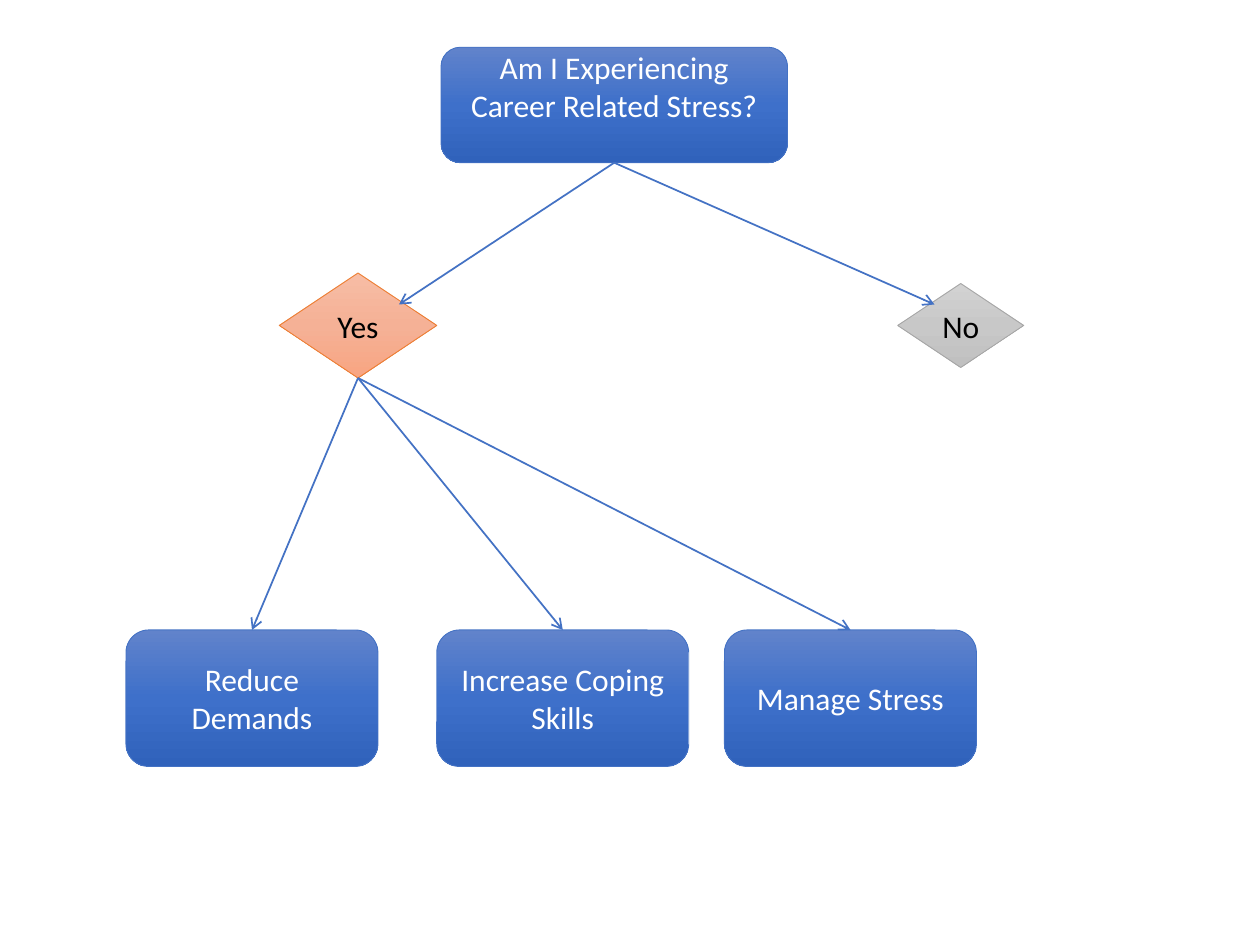
import copy

import pptx
import pptx.dml.color
import pptx.enum.shapes
import pptx.enum.text
import pptx.oxml
import pptx.oxml.ns
import pptx.util

RGBColor = pptx.dml.color.RGBColor
BLUE = RGBColor(0x44, 0x72, 0xC4)
ORANGE = RGBColor(0xED, 0x7D, 0x31)
GRAY = RGBColor(0xA5, 0xA5, 0xA5)
WHITE = RGBColor(0xFF, 0xFF, 0xFF)
BLACK = RGBColor(0, 0, 0)
BLUE_SHADES = [RGBColor(0x61, 0x83, 0xCB), RGBColor(0x3E, 0x70, 0xCA), RGBColor(0x30, 0x62, 0xBB)]
ORANGE_SHADES = [RGBColor(0xF7, 0xBD, 0xA5), RGBColor(0xF5, 0xB1, 0x96), RGBColor(0xF8, 0xA5, 0x82)]
GRAY_SHADES = [RGBColor(0xD2, 0xD2, 0xD2), RGBColor(0xC8, 0xC8, 0xC8), RGBColor(0xC0, 0xC0, 0xC0)]

PROCESS = pptx.enum.shapes.MSO_SHAPE.FLOWCHART_ALTERNATE_PROCESS
DECISION = pptx.enum.shapes.MSO_SHAPE.FLOWCHART_DECISION
TOP, BOTTOM = 0, 2

presentation = pptx.Presentation()
presentation.slide_width = pptx.util.Inches(10)
presentation.slide_height = pptx.util.Inches(7.5)
slide = presentation.slides.add_slide(presentation.slide_layouts[6])

# The grid has 120 columns and 90 rows.
COLUMN = presentation.slide_width / 120
ROW = presentation.slide_height / 90


def add_node(kind, text, left, top, width, height, shades, line_color, text_color):
    """Add a flowchart node placed in grid columns and rows."""
    shape = slide.shapes.add_shape(kind, round(left * COLUMN), round(top * ROW),
                                   round(width * COLUMN), round(height * ROW))
    shape.shadow.inherit = False
    shape.line.color.rgb = line_color
    shape.line.width = pptx.util.Pt(0.5)
    shape.fill.gradient()
    shape.fill.gradient_angle = 270
    stop_list = shape.fill._xPr.find(".//" + pptx.oxml.ns.qn("a:gsLst"))
    stop_list.append(copy.deepcopy(stop_list[-1]))
    for stop, position, shade in zip(shape.fill.gradient_stops, (0, 0.5, 1), shades):
        stop.position = position
        stop.color.rgb = shade
    text_frame = shape.text_frame
    text_frame.text = text
    text_frame.word_wrap = True
    text_frame.vertical_anchor = pptx.enum.text.MSO_ANCHOR.MIDDLE
    paragraph = text_frame.paragraphs[0]
    paragraph.alignment = pptx.enum.text.PP_ALIGN.CENTER
    font = paragraph.runs[0].font
    font.name = "Calibri"
    font.size = pptx.util.Pt(18)
    font.color.rgb = text_color
    return shape


def add_arrow(source, column, row, target=None):
    """Draw an arrow from the bottom of source to a grid point or the top of target."""
    connector = slide.shapes.add_connector(
        pptx.enum.shapes.MSO_CONNECTOR.STRAIGHT, 0, 0, round(column * COLUMN), round(row * ROW))
    connector.begin_connect(source, BOTTOM)
    if target is not None:
        connector.end_connect(target, TOP)
    connector.line.color.rgb = BLUE
    connector.line.width = pptx.util.Pt(1)
    pptx.oxml.ns.qn("a:ln")
    line = connector.line._get_or_add_ln()
    line.append(pptx.oxml.parse_xml(
        '<a:tailEnd xmlns:a="http://schemas.openxmlformats.org/drawingml/2006/main" type="arrow"/>'))
    line.addnext(pptx.oxml.parse_xml(
        '<a:effectLst xmlns:a="http://schemas.openxmlformats.org/drawingml/2006/main"/>'))


question = add_node(PROCESS, "Am I Experiencing Career Related Stress?",
                    42, 4.5, 33, 11, BLUE_SHADES, BLUE, WHITE)
# A deeper bottom margin lifts the question above the middle of its box.
question.text_frame.margin_top = 0
question.text_frame.margin_bottom = pptx.util.Inches(0.3)

yes = add_node(DECISION, "Yes", 26.6, 26, 15, 10, ORANGE_SHADES, ORANGE, BLACK)
add_node(DECISION, "No", 85.5, 27, 12, 8, GRAY_SHADES, GRAY, BLACK)
for column in (38, 89):
    add_arrow(question, column, 29)

for text, left in (("Reduce Demands", 12), ("Increase Coping Skills", 41.6), ("Manage Stress", 69)):
    strategy = add_node(PROCESS, text, left, 60, 24, 13, BLUE_SHADES, BLUE, WHITE)
    add_arrow(yes, left + 12, 60, strategy)

presentation.save("out.pptx")
